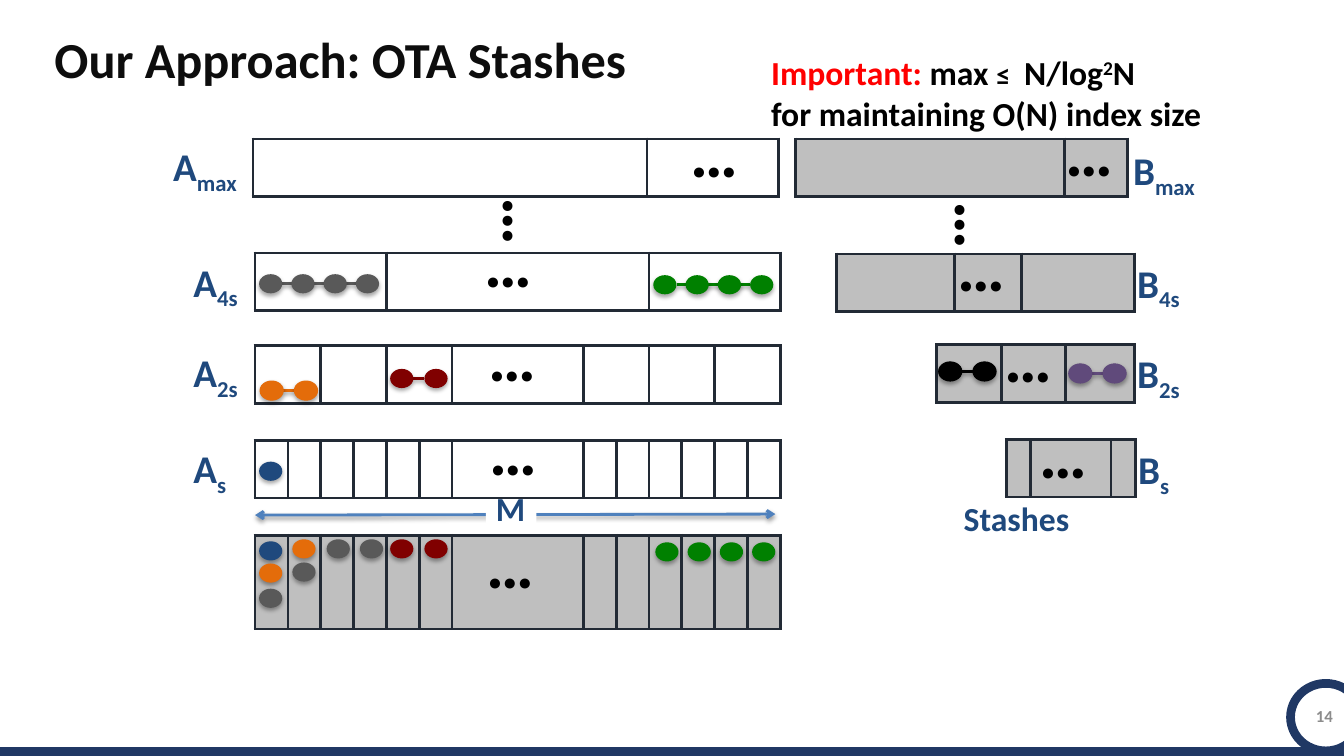
from lxml.etree import SubElement
from pptx import Presentation
from pptx.dml.color import RGBColor
from pptx.enum.shapes import MSO_CONNECTOR, MSO_SHAPE
from pptx.enum.text import MSO_ANCHOR, PP_ALIGN
from pptx.oxml.ns import qn
from pptx.util import Inches, Pt

NAVY = RGBColor(0x1F, 0x49, 0x7D)
FRAME = RGBColor(0x20, 0x38, 0x64)
BORDER = RGBColor(0x22, 0x2A, 0x35)
ARROW = RGBColor(0x4F, 0x81, 0xBD)
TITLE = RGBColor(0x0D, 0x0D, 0x0D)
BLACK = RGBColor(0, 0, 0)
WHITE = RGBColor(0xFF, 0xFF, 0xFF)
SILVER = RGBColor(0xBF, 0xBF, 0xBF)
PAGE = RGBColor(0x8C, 0x8C, 0x8C)
GRAY = RGBColor(0x59, 0x59, 0x59)
GREEN = RGBColor(0, 0x80, 0)
MAROON = RGBColor(0x80, 0, 0)
ORANGE = RGBColor(0xE4, 0x6C, 0x0A)
PURPLE = RGBColor(0x60, 0x4A, 0x7B)
RED = RGBColor(0xFF, 0, 0)

DOT_W, DOT_H = 0.23, 0.19
ROW_H = 0.57
ARRAY_W = 5.21
SLOT = ARRAY_W / 16
SINGLE_SLOTS = [1] * 6 + [4] + [1] * 6


def style(run, size, color, baseline=0):
    run.font.name = "Calibri"
    run.font.size = Pt(size)
    run.font.bold = True
    run.font.color.rgb = color
    if baseline:
        run._r.get_or_add_rPr().set("baseline", str(baseline * 1000))


def add_runs(paragraph, parts):
    for text, *look in parts:
        run = paragraph.add_run()
        run.text = text
        style(run, *look)


def add_text(slide, left, top, width, height, *lines, wrap=True):
    box = slide.shapes.add_textbox(Inches(left), Inches(top), Inches(width), Inches(height))
    frame = box.text_frame
    frame.word_wrap = wrap
    for index, parts in enumerate(lines):
        add_runs(frame.add_paragraph() if index else frame.paragraphs[0], parts)
    return box


def add_label(slide, left, top, letter, index):
    add_text(slide, left, top, 1.2, ROW_H, [(letter, 28, NAVY), (index, 28, NAVY, -25)])


def add_ellipsis(slide, left, top, width=0.86, turn=0):
    add_text(slide, left, top, width, 0.91, [("…", 48, BLACK)]).rotation = turn


def set_effects(shape, distance=0, alpha=0):
    effects = SubElement(shape._element.spPr, qn("a:effectLst"))
    if distance:
        shadow = SubElement(effects, qn("a:outerShdw"), blurRad=str(Pt(3.1)),
                            dist=str(Pt(distance)), dir="5400000", rotWithShape="0")
        color = SubElement(shadow, qn("a:srgbClr"), val="000000")
        SubElement(color, qn("a:alpha"), val=str(alpha * 1000))


def add_line(slide, start, end, color, width=2, arrows=False, shadow=True):
    line = slide.shapes.add_connector(
        MSO_CONNECTOR.STRAIGHT, *(Inches(value) for value in (*start, *end)))
    line.line.color.rgb = color
    line.line.width = Pt(width)
    if arrows:
        for tip in ("a:headEnd", "a:tailEnd"):
            SubElement(line.line._get_or_add_ln(), qn(tip), type="arrow")
    set_effects(line, *((1.6, 38) if shadow else ()))


def add_dots(slide, left, top, color, count=1, step=0.34, linked=False, outlined=False):
    if linked:
        middle = top + DOT_H / 2
        add_line(slide, (left + DOT_W, middle), (left + step * (count - 1), middle), color)
    for index in range(count):
        dot = slide.shapes.add_shape(
            MSO_SHAPE.FLOWCHART_CONNECTOR, Inches(left + index * step), Inches(top),
            Inches(DOT_W), Inches(DOT_H))
        dot.fill.solid()
        dot.fill.fore_color.rgb = color
        if outlined:
            dot.line.color.rgb = color
            dot.line.width = Pt(0.75)
        else:
            dot.line.fill.background()
        set_effects(dot, 1.8, 35)


def add_array(slide, left, top, widths, fill=None, height=ROW_H):
    table = slide.shapes.add_table(1, len(widths), Inches(left), Inches(top),
                                   Inches(sum(widths)), Inches(height)).table
    table.first_row = table.horz_banding = False
    table.rows[0].height = Inches(height)
    for column, width in zip(table.columns, widths):
        column.width = Inches(width)
    for cell in table.iter_cells():
        borders = cell._tc.get_or_add_tcPr()
        for side in ("a:lnL", "a:lnR", "a:lnT", "a:lnB"):
            edge = SubElement(borders, qn(side), w=str(Pt(2.25)))
            SubElement(SubElement(edge, qn("a:solidFill")), qn("a:srgbClr"), val=str(BORDER))
        if fill is None:
            cell.fill.background()
        else:
            cell.fill.solid()
            cell.fill.fore_color.rgb = fill


def add_title(slide):
    title = slide.shapes.title
    title.left, title.top, title.width, title.height = (
        Inches(value) for value in (0.54, 0.42, 10.59, 0.42))
    frame = title.text_frame
    frame.text = "Our Approach: OTA Stashes"
    frame.margin_left = frame.margin_right = frame.margin_top = frame.margin_bottom = 0
    frame.vertical_anchor = MSO_ANCHOR.MIDDLE
    heading = frame.paragraphs[0]
    heading.alignment = PP_ALIGN.LEFT
    heading.line_spacing = 0.8
    style(heading.runs[0], 36, TITLE)


def add_page_frame(slide):
    number = add_text(slide, 12.85, 6.9, 0.57, 0.4, [("14", 12, PAGE)]).text_frame
    number.vertical_anchor = MSO_ANCHOR.MIDDLE
    number.paragraphs[0].alignment = PP_ALIGN.CENTER
    add_line(slide, (-0.12, 7.47), (13.34, 7.47), FRAME, 8.25, shadow=False)
    ring = slide.shapes.add_shape(MSO_SHAPE.OVAL, Inches(12.8), Inches(6.78),
                                  Inches(0.7), Inches(0.67))
    ring.shadow.inherit = False
    ring.fill.background()
    ring.line.color.rgb = FRAME
    ring.line.width = Pt(6.25)


def add_width_marker(slide):
    add_line(slide, (2.53, 5.11), (7.69, 5.1), ARROW, arrows=True)
    marker = add_text(slide, 4.82, 4.79, 0.5, 0.5, [("M", 24, NAVY)], wrap=False)
    marker.fill.solid()
    marker.fill.fore_color.rgb = WHITE


def main():
    prs = Presentation()
    prs.slide_width, prs.slide_height = Inches(13.33), Inches(7.5)
    slide = prs.slides.add_slide(prs.slide_layouts[5])
    add_title(slide)
    add_width_marker(slide)

    for left, top, slots, fill, height in (
            (2.53, 4.37, SINGLE_SLOTS, WHITE, ROW_H),
            (2.53, 3.43, [2, 2, 2, 4, 2, 2, 2], None, ROW_H),
            (2.53, 2.51, [4, 8, 4], None, ROW_H),
            (2.51, 1.38, [12, 4], None, ROW_H),
            (2.53, 5.31, SINGLE_SLOTS, SILVER, 0.93)):
        add_array(slide, left, top, [SLOT * count for count in slots], fill, height)
    for left, top, widths in (
            (9.98, 4.36, [0.23, 0.8, 0.23]), (9.29, 3.42, [0.64, 0.64, 0.68]),
            (8.3, 2.52, [1.17, 0.66, 1.12]), (7.89, 1.38, [2.67, 0.62])):
        add_array(slide, left, top, widths, SILVER)

    for index, a_left, a_top, b_left, b_top in (
            ("s", 1.82, 4.36, 11.19, 4.37), ("2s", 1.82, 3.41, 11.18, 3.42),
            ("4s", 1.82, 2.51, 11.18, 2.52), ("max", 1.62, 1.36, 11.14, 1.4)):
        add_label(slide, a_left, a_top, "A", index)
        add_label(slide, b_left, b_top, "B", index)

    for left, top in ((4.76, 4), (4.75, 3.07), (4.71, 2.14), (4.73, 5.12), (6.75, 1.05),
                      (9.4, 2.18), (9.86, 3.08), (10.21, 4.03), (10.47, 1.04)):
        add_ellipsis(slide, left, top)
    for left, top in ((4.9, 1.76), (9.39, 1.8)):
        add_ellipsis(slide, left, top, 0.7, 90)

    add_dots(slide, 2.57, 2.72, GRAY, 4, 0.32, linked=True)
    add_dots(slide, 6.48, 2.73, GREEN, 4, 0.32, linked=True)
    add_dots(slide, 3.87, 3.66, MAROON, 2, linked=True)
    for left, top, color in ((2.58, 3.78, ORANGE), (10.6, 3.61, PURPLE), (9.31, 3.59, BLACK)):
        add_dots(slide, left, top, color, 2, linked=True, outlined=True)
    add_dots(slide, 6.5, 5.38, GREEN, 4, 0.32)
    add_dots(slide, 3.24, 5.35, GRAY, 2, 0.33)
    add_dots(slide, 3.87, 5.35, MAROON, 2)
    for left, top, color in (
            (2.57, 4.58, NAVY), (2.57, 5.37, NAVY), (2.57, 5.59, ORANGE),
            (2.57, 5.84, GRAY), (2.9, 5.35, ORANGE), (2.9, 5.58, GRAY)):
        add_dots(slide, left, top, color)

    add_text(slide, 9.46, 4.89, 1.26, 0.5, [("Stashes", 24, NAVY)], wrap=False)
    add_text(slide, 7.55, 0.47, 5.5, 0.91,
             [("Important:", 24, RED), (" max ", 24, BLACK), ("≤ ", 20, BLACK),
              (" N/log", 24, BLACK), ("2", 24, BLACK, 30), ("N", 24, BLACK)],
             [("for maintaining O(N) index size", 24, BLACK)])
    add_page_frame(slide)
    prs.save("out.pptx")


if __name__ == "__main__":
    main()
